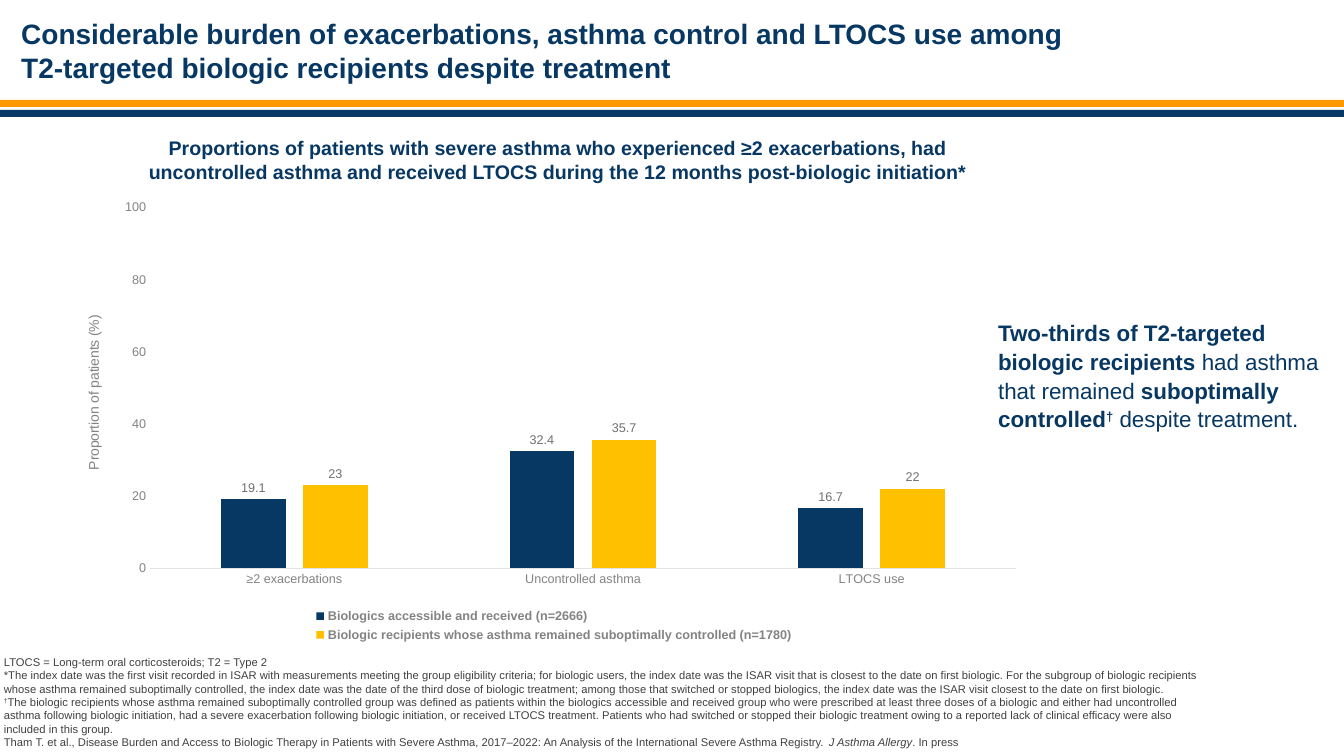
from lxml import etree
from pptx import Presentation
from pptx.chart.data import CategoryChartData
from pptx.dml.color import RGBColor as RGB
from pptx.enum.chart import XL_CHART_TYPE as Kind, XL_LABEL_POSITION as Spot
from pptx.enum.chart import XL_LEGEND_POSITION as Side, XL_TICK_MARK as Tick
from pptx.enum.shapes import MSO_SHAPE as Shape
from pptx.enum.text import MSO_ANCHOR as Anchor, MSO_AUTO_SIZE as Fit, PP_ALIGN as Align
from pptx.oxml.ns import qn
from pptx.util import Inches, Pt

FACE = "Arial"
HUES = {"navy": "073763", "orange": "FF9900", "gold": "FFC000", "ink": "404040",
        "axis": "838383", "label": "707070", "rule": "E2E2E2"}
hue = {name: RGB.from_string(code) for name, code in HUES.items()}


def style(font, size, color, bold=False):
    font.name, font.size, font.bold = FACE, Pt(size), bold
    font.color.rgb = hue[color]


def place(part, **spots):
    """Fix a chart part at fractions of the chart's width and height."""
    layout = part.find(qn("c:layout"))
    if layout is None:
        layout = etree.Element(qn("c:layout"))
        part.insert(0, layout)
    manual = etree.SubElement(layout, qn("c:manualLayout"))
    for tag, value in spots.items():
        etree.SubElement(manual, qn(f"c:{tag}")).set("val", str(value))


deck = Presentation()
deck.slide_width, deck.slide_height = Inches(13.33), Inches(7.5)
slide = deck.slides.add_slide(deck.slide_layouts[5])
shapes = slide.shapes

# Header
for top, color in ((0.99, "orange"), (1.09, "navy")):
    band = shapes.add_shape(Shape.RECTANGLE, 0, Inches(top), deck.slide_width, Inches(0.07))
    band.shadow.inherit = False
    band.fill.solid()
    band.fill.fore_color.rgb = hue[color]
    band.line.fill.background()

title = shapes.title
title.left, title.top = Inches(0.21), Inches(0.34)
title.width, title.height = Inches(10.81), Inches(0.49)
frame = title.text_frame
frame.auto_size, frame.word_wrap = Fit.NONE, True
frame.vertical_anchor = Anchor.BOTTOM
frame.margin_left = frame.margin_bottom = 0
frame.margin_top, frame.margin_right = Inches(0.07), Inches(0.13)
para = frame.paragraphs[0]
para.alignment = Align.LEFT
run = para.add_run()
run.text = ("Considerable burden of exacerbations, asthma control and LTOCS use among "
            "T2-targeted biologic recipients despite treatment")
style(run.font, 20, "navy", True)

# Chart
data = CategoryChartData()
data.categories = ["≥2 exacerbations", "Uncontrolled asthma", "LTOCS use"]
data.add_series("Biologics accessible and received (n=2666)", (19.1, 32.4, 16.7))
data.add_series("Biologic recipients whose asthma remained suboptimally controlled (n=1780)",
                (23, 35.7, 22))
chart = shapes.add_chart(Kind.COLUMN_CLUSTERED, Inches(0.62), Inches(1.88),
                         Inches(9.65), Inches(4.53), data).chart
style(chart.font, 10, "ink")
chart.has_title = False
plot = chart.plots[0]
plot.vary_by_categories = False
plot.gap_width, plot.overlap = 219, -27
for series, color in zip(plot.series, ("navy", "gold")):
    series.format.fill.solid()
    series.format.fill.fore_color.rgb = hue[color]
    labels = series.data_labels
    labels.show_value = True
    labels.position = Spot.OUTSIDE_END
    style(labels.font, 9, "label")

cats, vals = chart.category_axis, chart.value_axis
for axis in (cats, vals):
    axis.major_tick_mark = axis.minor_tick_mark = Tick.NONE
    axis.has_major_gridlines = False
    style(axis.tick_labels.font, 9, "axis")
cats.format.line.color.rgb = hue["rule"]
cats.format.line.width = Pt(0.75)
vals.format.line.fill.background()
vals.minimum_scale, vals.maximum_scale, vals.major_unit = 0, 100, 20
run = vals.axis_title.text_frame.paragraphs[0].add_run()
run.text = "Proportion of patients (%)"
style(run.font, 10, "axis")

chart.has_legend = True
legend = chart.legend
legend.position = Side.BOTTOM
legend.include_in_layout = False
style(legend.font, 9, "axis", True)

area = chart.element.find(".//" + qn("c:plotArea"))
place(area, layoutTarget="inner", xMode="edge", yMode="edge", x=0.09, y=0.04, w=0.89, h=0.79)
place(vals.axis_title.element if hasattr(vals.axis_title, "element")
      else area.find(".//" + qn("c:title")), xMode="edge", yMode="edge", x=0.02, y=0.27)
place(chart.element.find(".//" + qn("c:legend")),
      xMode="edge", yMode="edge", x=0.25, y=0.91, w=0.51, h=0.09)

# Text boxes: place, margins, size, colour, alignment, line spacing, paragraphs of (text, marks)
# Marks: b bold, i italic, s superscript
PAD = (0.1, 0.05)
boxes = [
    ((-0.06, 6.45, 12.09, 1.04), PAD, 8, "ink", Align.LEFT, 1, [
        [("LTOCS = Long-term oral corticosteroids; T2 = Type 2", "")],
        [("*The index date was the first visit recorded in ISAR with measurements meeting the "
          "group eligibility criteria; for biologic users, the index date was the ISAR visit that "
          "is closest to the date on first biologic. For the subgroup of biologic recipients whose "
          "asthma remained suboptimally controlled, the index date was the date of the third dose "
          "of biologic treatment; among those that switched or stopped biologics, the index date "
          "was the ISAR visit closest to the date on first biologic.", "")],
        [("†", "s"),
         ("The biologic recipients whose asthma remained suboptimally controlled group was defined "
          "as patients within the biologics accessible and received group who were prescribed at "
          "least three doses of a biologic and either had uncontrolled asthma following biologic "
          "initiation, had a severe exacerbation following biologic initiation, or received LTOCS "
          "treatment. Patients who had switched or stopped their biologic treatment owing to a "
          "reported lack of clinical efficacy were also included in this group.", "")],
        [("Tham T. et al., Disease Burden and Access to Biologic Therapy in Patients with Severe "
          "Asthma, 2017–2022: An Analysis of the International Severe Asthma Registry. ", ""),
         ("J Asthma Allergy", "i"), (". In press", "")]]),
    ((1.2, 1.3, 8.67, 0.57), PAD, 14, "navy", Align.CENTER, 1, [
        [("Proportions of patients with severe asthma who experienced ≥2 exacerbations, had "
          "uncontrolled asthma and received LTOCS during the 12 months post-biologic "
          "initiation*", "b")]]),
    ((9.9, 3.15, 3.43, 1.37), (0, 0), 16, "navy", Align.LEFT, 1.07, [
        [("Two-thirds of T2-targeted biologic recipients", "b"),
         (" had asthma that remained ", ""), ("suboptimally controlled", "b"),
         ("†", "bs"), (" despite treatment.", "")]]),
]
for spot, (side, edge), size, color, align, gap, paras in boxes:
    frame = shapes.add_textbox(*map(Inches, spot)).text_frame
    frame.word_wrap = True
    frame.margin_left = frame.margin_right = Inches(side)
    frame.margin_top = frame.margin_bottom = Inches(edge)
    for i, parts in enumerate(paras):
        para = frame.add_paragraph() if i else frame.paragraphs[0]
        para.alignment, para.line_spacing = align, gap
        for text, marks in parts:
            run = para.add_run()
            run.text = text
            style(run.font, size, color, "b" in marks)
            run.font.italic = "i" in marks
            if "s" in marks:
                run._r.get_or_add_rPr().set("baseline", "30000")

deck.save("out.pptx")
